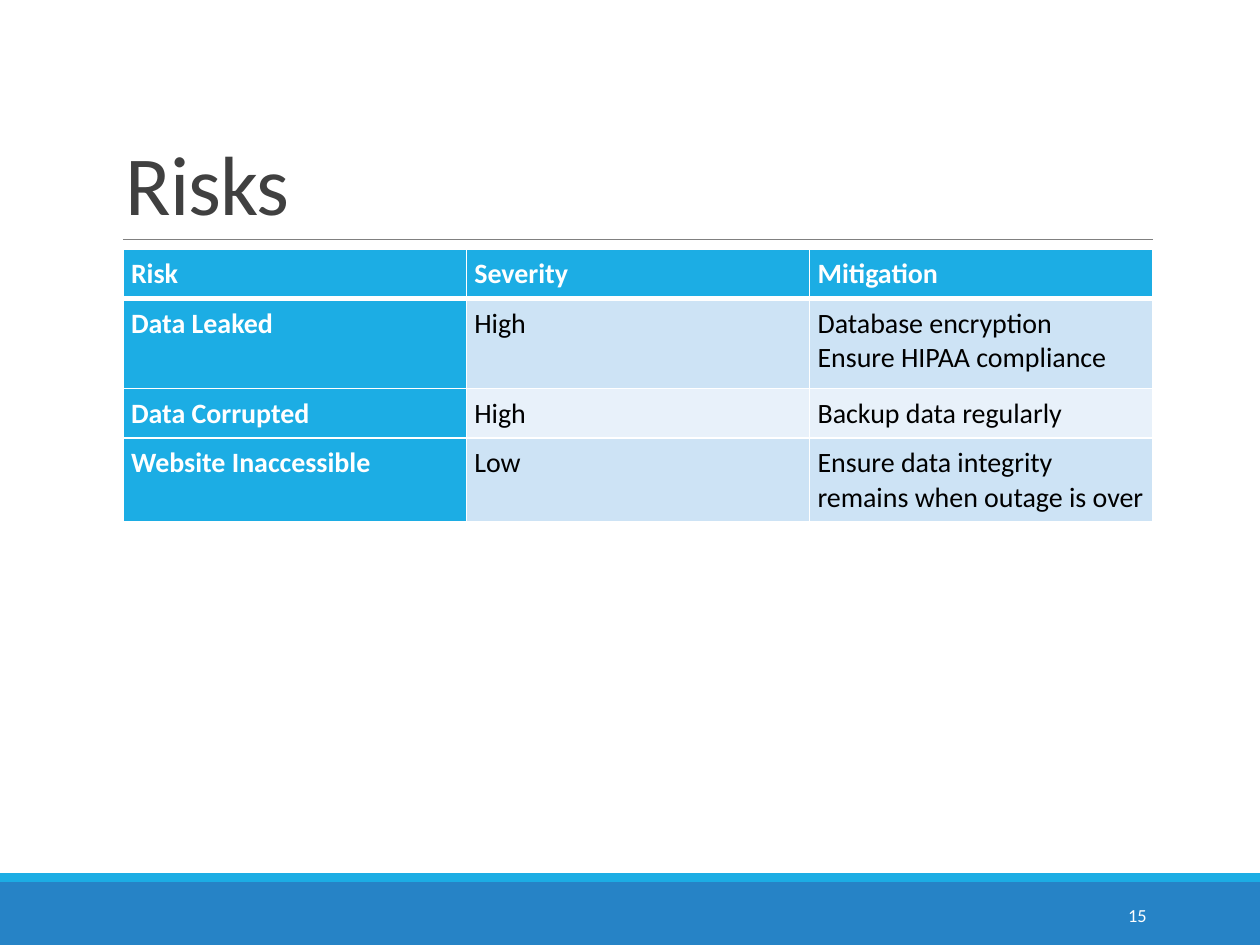
from lxml import etree
from pptx import Presentation, util as u
from pptx.dml.color import RGBColor
from pptx.enum import shapes, text
from pptx.oxml import ns

TITLE = "Risks"
PAGE = "15"
ROWS = [
    ("Risk", "Severity", "Mitigation"),
    ("Data Leaked", "High", "Database encryption\nEnsure HIPAA compliance"),
    ("Data Corrupted", "High", "Backup data regularly"),
    ("Website Inaccessible", "Low", "Ensure data integrity remains when outage is over"),
]
ROW_HEIGHTS = [49, 90, 49, 82]
TABLE_LEFT, TABLE_TOP, TABLE_WIDTH = 123, 249, 1030
CELL_INSET = 8
COLORS = {
    "accent": "1CADE4", "footer": "2683C6", "rule": "808080", "title": "404040",
    "white": "FFFFFF", "black": "000000", "odd": "CDE3F5", "even": "E8F1FA",
}
BARS = [(882, 63, "footer"), (873, 9, "accent")]


def px(n):
    return u.Emu(n * 914400 // 126)


def rgb(name):
    return RGBColor.from_string(COLORS[name])


def write(tf, content, size, color, bold=False, align=None, spacing=None, track=None):
    tf.word_wrap = True
    for i, line in enumerate(content.split("\n")):
        p = tf.paragraphs[0] if i == 0 else tf.add_paragraph()
        p.alignment = align
        p.line_spacing = spacing
        r = p.add_run()
        r.text = line
        r.font.name = "Calibri"
        r.font.size = u.Pt(size)
        r.font.bold = bold
        r.font.color.rgb = rgb(color)
        if track is not None:
            r._r.get_or_add_rPr().set("spc", str(track))


def add_text(s, box, content, anchor, **fmt):
    tf = s.shapes.add_textbox(*map(px, box)).text_frame
    tf.vertical_anchor = anchor
    write(tf, content, **fmt)


def set_borders(cell, widths):
    tc_pr = cell._tc.get_or_add_tcPr()
    for i, (side, width) in enumerate(widths.items()):
        ln = etree.Element(ns.qn("a:ln" + side), w=str(u.Pt(width)))
        fill = etree.SubElement(ln, ns.qn("a:solidFill"))
        etree.SubElement(fill, ns.qn("a:srgbClr"), val=COLORS["white"])
        tc_pr.insert(i, ln)


def add_risk_table(s):
    frame = s.shapes.add_table(
        len(ROWS), len(ROWS[0]), px(TABLE_LEFT), px(TABLE_TOP),
        px(TABLE_WIDTH), px(sum(ROW_HEIGHTS)))
    table = frame.table
    for row, height in zip(table.rows, ROW_HEIGHTS):
        row.height = px(height)
    for i, values in enumerate(ROWS):
        for j, value in enumerate(values):
            cell = table.cell(i, j)
            heading = i == 0 or j == 0
            cell.margin_left = cell.margin_right = px(CELL_INSET)
            cell.margin_top = cell.margin_bottom = px(CELL_INSET)
            cell.fill.solid()
            cell.fill.fore_color.rgb = rgb("accent" if heading else "odd" if i % 2 else "even")
            set_borders(cell, {"L": 1, "R": 1, "T": 3 if i == 1 else 1, "B": 3 if i == 0 else 1})
            write(cell.text_frame, value, 16, "white" if heading else "black", bold=heading)


def main():
    prs = Presentation()
    prs.slide_width, prs.slide_height = px(1260), px(945)
    s = prs.slides.add_slide(prs.slide_layouts[6])
    for top, height, color in BARS:
        sp = s.shapes.add_shape(
            shapes.MSO_SHAPE.RECTANGLE, 0, px(top), prs.slide_width, px(height))
        sp.shadow.inherit = False
        sp.fill.solid()
        sp.fill.fore_color.rgb = rgb(color)
        sp.line.fill.background()
    rule = s.shapes.add_connector(
        shapes.MSO_CONNECTOR.STRAIGHT, px(123), px(239), px(1153), px(239))
    rule.line.color.rgb = rgb("rule")
    rule.line.width = u.Pt(0.5)
    etree.SubElement(rule._element.spPr, ns.qn("a:effectLst"))
    add_text(s, (113, 39, 1040, 200), TITLE, text.MSO_ANCHOR.BOTTOM,
             size=48, color="title", spacing=0.85, track=-50)
    add_text(s, (1023, 890, 136, 50), PAGE, text.MSO_ANCHOR.MIDDLE,
             size=10.5, color="white", align=text.PP_ALIGN.RIGHT)
    add_risk_table(s)
    prs.save("out.pptx")


if __name__ == "__main__":
    main()
